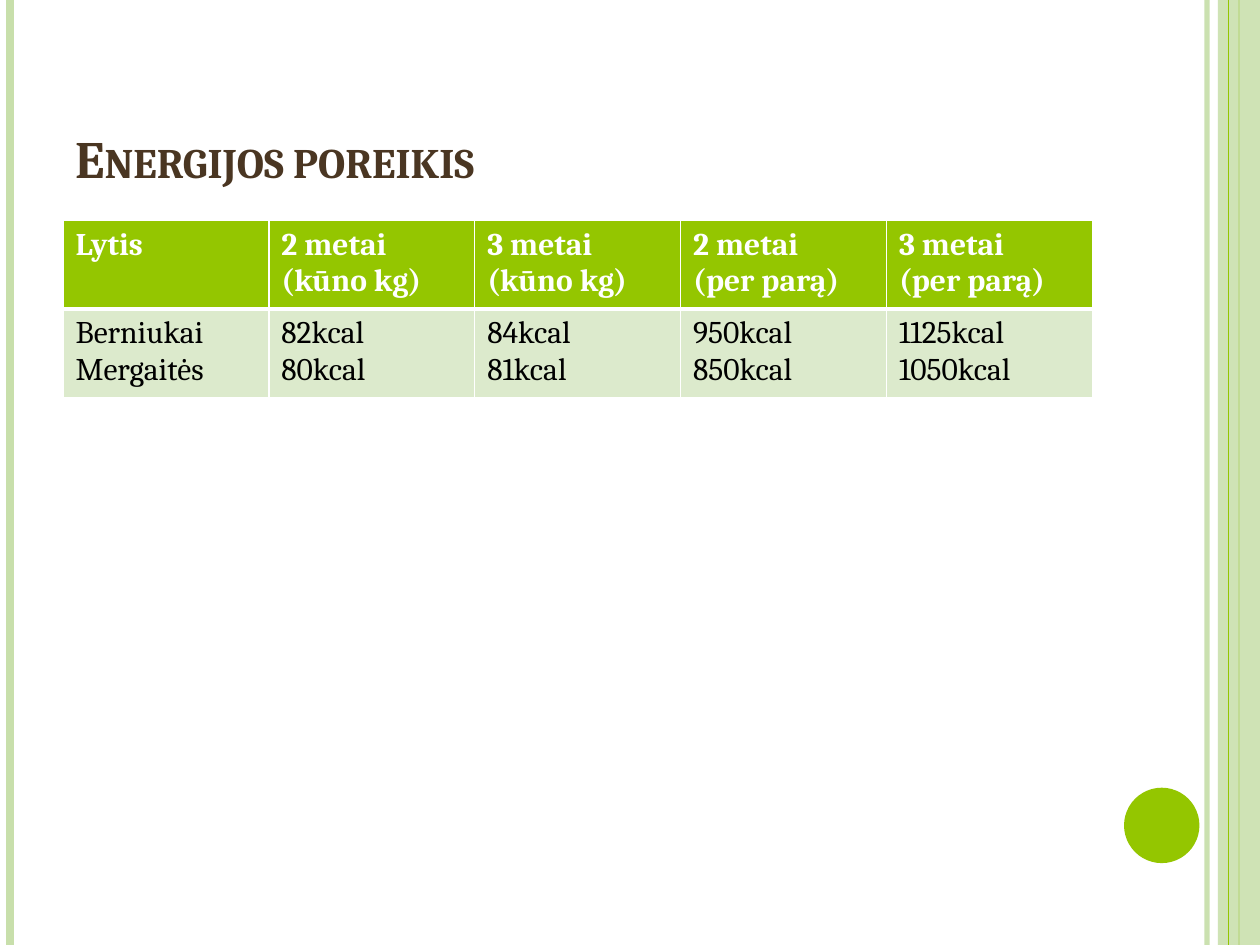
from lxml import etree
from pptx import Presentation
from pptx.dml.color import RGBColor
from pptx.enum.shapes import MSO_CONNECTOR, MSO_SHAPE
from pptx.enum.text import MSO_ANCHOR
from pptx.oxml.ns import qn
from pptx.util import Cm, Pt

STRAIGHT = MSO_CONNECTOR.STRAIGHT
RECTANGLE = MSO_SHAPE.RECTANGLE
OVAL = MSO_SHAPE.OVAL
BOTTOM = MSO_ANCHOR.BOTTOM

FONT = "Cambria"
COLORS = {
    "green": "94C600",
    "pale": "C8DFAB",
    "row": "DCEACC",
    "brown": "4A3622",
    "white": "FFFFFF",
    "black": "000000",
}
WIDTH, HEIGHT = 25.4, 19.05
ROW_HEIGHT = 1.71
HEADER = ["Lytis", "2 metai (kūno kg)", "3 metai\n(kūno kg)",
          "2 metai\n(per parą)", "3 metai\n(per parą)"]
NEEDS = ["Berniukai\nMergaitės", "82kcal\n80kcal", "84kcal\n81kcal",
         "950kcal\n850kcal", "1125kcal\n1050kcal"]


def paint(fill, color, opacity=100):
    fill.solid()
    fill.fore_color.rgb = RGBColor.from_string(COLORS[color])
    if opacity < 100:
        tint = fill._xPr.find(".//" + qn("a:srgbClr"))
        etree.SubElement(tint, qn("a:alpha"), val=str(opacity * 1000))


def write_text(frame, text, size=18, color="black", bold=False, small_caps=False):
    frame.word_wrap = True
    for index, line in enumerate(text.split("\n")):
        para = frame.add_paragraph() if index else frame.paragraphs[0]
        span = para.add_run()
        span.text = line
        span.font.name = FONT
        span.font.size = Pt(size)
        span.font.bold = bold
        span.font.color.rgb = RGBColor.from_string(COLORS[color])
        if small_caps:
            span.font._element.set("cap", "small")


def add_stripe(page, left, color, width, opacity=100):
    stripe = page.shapes.add_connector(STRAIGHT, Cm(left), 0, Cm(left), Cm(HEIGHT))
    stripe.line.width = Pt(width)
    paint(stripe.line.fill, color, opacity)
    etree.SubElement(stripe._element.spPr, qn("a:effectLst"))


def add_figure(page, kind, left, top, width, height, color, opacity=100):
    figure = page.shapes.add_shape(kind, Cm(left), Cm(top), Cm(width), Cm(height))
    figure.shadow.inherit = False
    figure.line.fill.background()
    paint(figure.fill, color, opacity)


def add_title(page, text):
    box = page.shapes.add_textbox(Cm(1.27), Cm(0.76), Cm(20.75), Cm(3.18))
    box.text_frame.vertical_anchor = BOTTOM
    write_text(box.text_frame, text, size=30, color="brown", bold=True, small_caps=True)


def add_borders(cell, top, bottom):
    properties = cell._tc.get_or_add_tcPr()
    for side, width in (("L", 1), ("R", 1), ("T", top), ("B", bottom)):
        border = etree.SubElement(properties, qn("a:ln" + side), w=str(Pt(width)))
        fill = etree.SubElement(border, qn("a:solidFill"))
        etree.SubElement(fill, qn("a:srgbClr"), val=COLORS["white"])


def fill_row(table, row, texts, fill, top, bottom, **text_format):
    table.rows[row].height = Cm(ROW_HEIGHT)
    for column, text in enumerate(texts):
        cell = table.cell(row, column)
        add_borders(cell, top, bottom)
        paint(cell.fill, fill)
        write_text(cell.text_frame, text, **text_format)


def add_needs_table(page):
    frame = page.shapes.add_table(2, len(HEADER), Cm(1.27), Cm(4.45),
                                  Cm(20.75), Cm(2 * ROW_HEIGHT))
    fill_row(frame.table, 0, HEADER, "green", 1, 3, color="white", bold=True)
    fill_row(frame.table, 1, NEEDS, "row", 3, 1)


def main():
    deck = Presentation()
    deck.slide_width, deck.slide_height = Cm(WIDTH), Cm(HEIGHT)
    page = deck.slides.add_slide(deck.slide_layouts[6])
    add_stripe(page, 24.33, "pale", 3, opacity=93)
    add_stripe(page, 0.21, "pale", 4.5)
    add_stripe(page, 24.98, "green", 1.5)
    add_figure(page, RECTANGLE, 24.55, 0, WIDTH - 24.55, HEIGHT, "pale", opacity=87)
    add_stripe(page, 24.77, "green", 0.75)
    add_figure(page, OVAL, 22.66, 15.88, 1.52, 1.52, "green")
    add_title(page, "Energijos poreikis")
    add_needs_table(page)
    deck.save("out.pptx")


if __name__ == "__main__":
    main()
